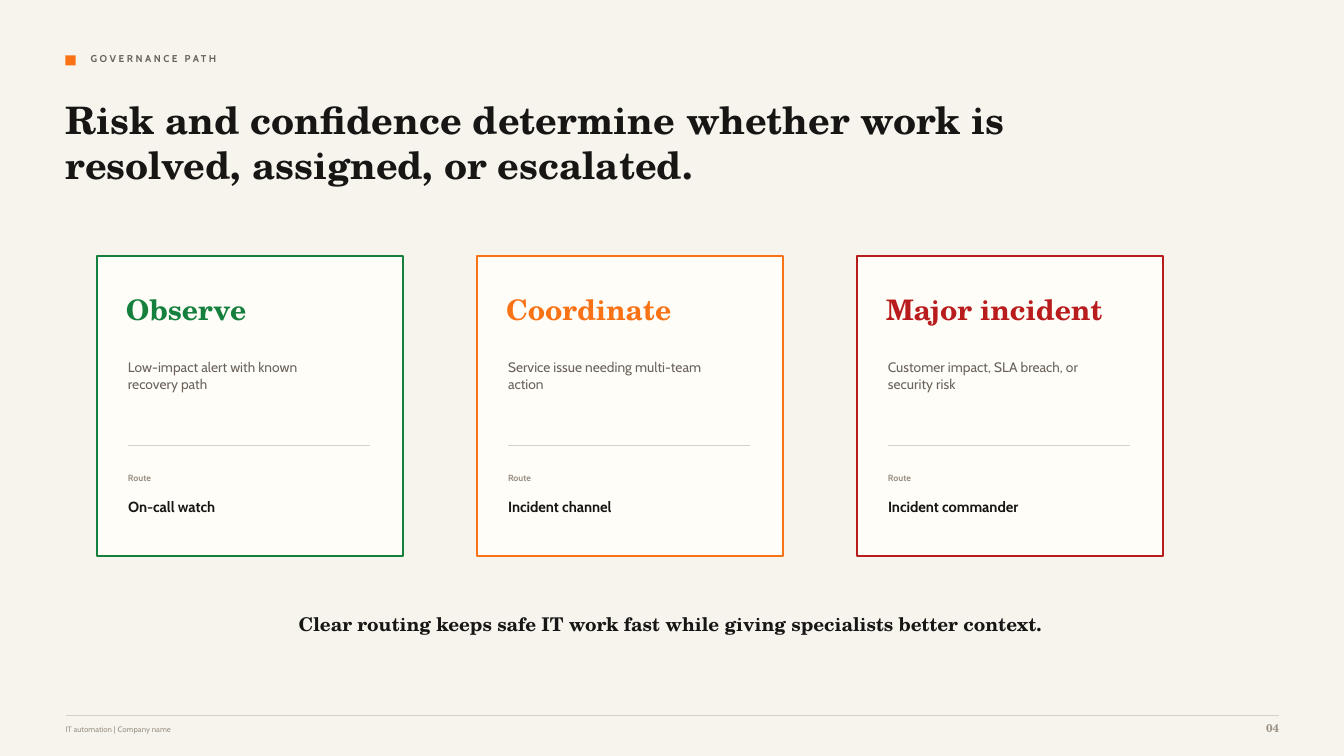
from lxml.etree import SubElement
from pptx import Presentation
from pptx.dml.color import RGBColor
from pptx.enum.shapes import MSO_CONNECTOR, MSO_SHAPE
from pptx.enum.text import MSO_ANCHOR, MSO_AUTO_SIZE, PP_ALIGN
from pptx.oxml.ns import qn
from pptx.util import Emu, Pt

EMU_PER_PX = 9144  # 100 px to the inch

SERIF, SANS = "TeX Gyre Schola", "Cabin"
PAPER, CARD = "F7F4EE", "FFFDF8"
INK, BODY, MUTED, RULE = "171614", "69635A", "9A9184", "D9D0C3"
GREEN, ORANGE, RED = "15803D", "F97316", "B91C1C"


def px(length):
    return Emu(length * EMU_PER_PX)


def colour(value):
    return RGBColor.from_string(value)


class SlideBuilder:
    def __init__(self, page):
        self.page = page

    def background(self, fill):
        self.page.background.fill.solid()
        self.page.background.fill.fore_color.rgb = colour(fill)

    def format_text(self, box, text, size, ink, font=SANS, bold=True,
                    align=PP_ALIGN.LEFT, tracking=0):
        frame = box.text_frame
        frame.text = text
        frame.word_wrap = True
        frame.auto_size = MSO_AUTO_SIZE.NONE
        frame.vertical_anchor = MSO_ANCHOR.TOP
        frame.margin_left = frame.margin_right = 0
        frame.margin_top = frame.margin_bottom = 0
        for para in frame.paragraphs:
            para.alignment = align
            for span in para.runs:
                span.font.name = font
                span.font.size = Pt(size)
                span.font.bold = bold
                span.font.color.rgb = colour(ink)
                if tracking:
                    span.font._element.set("spc", str(tracking))

    def title(self, left, top, width, height, text, size, ink):
        box = self.page.shapes.title
        box.left, box.top = px(left), px(top)
        box.width, box.height = px(width), px(height)
        self.format_text(box, text, size, ink, SERIF)

    def text(self, left, top, width, height, text, size, ink, **style):
        box = self.page.shapes.add_textbox(px(left), px(top), px(width), px(height))
        self.format_text(box, text, size, ink, **style)

    def rect(self, left, top, width, height, fill, line=None):
        shape = self.page.shapes.add_shape(
            MSO_SHAPE.RECTANGLE, px(left), px(top), px(width), px(height))
        shape.shadow.inherit = False
        shape.fill.solid()
        shape.fill.fore_color.rgb = colour(fill)
        if line:
            shape.line.color.rgb = colour(line)
            shape.line.width = Pt(1.5)
        else:
            shape.line.fill.background()

    def rule(self, left, top, width):
        line = self.page.shapes.add_connector(
            MSO_CONNECTOR.STRAIGHT, px(left), px(top), px(left + width), px(top))
        line.line.color.rgb = colour(RULE)
        line.line.width = Pt(0.75)
        SubElement(line._element.spPr, qn("a:effectLst"))

    def card(self, left, accent, heading, description, route):
        inner = left + 31
        self.rect(left, 254, 304, 298, CARD, accent)
        self.text(left + 29, 290, 229, 35, heading, 20.2, accent, font=SERIF)
        self.text(inner, 356, 233, 52, description, 9.8, BODY, bold=False)
        self.rule(inner, 442, 240)
        self.text(inner, 469, 167, 15, "Route", 6.4, MUTED)
        self.text(inner, 494, 229, 23, route, 10.5, INK)


def main():
    deck = Presentation()
    deck.slide_width, deck.slide_height = Emu(12192000), Emu(6858000)
    title_only = deck.slide_layouts[5]
    slide = SlideBuilder(deck.slides.add_slide(title_only))
    slide.background(PAPER)

    # Header
    slide.rect(65, 55, 10, 10, ORANGE)
    slide.text(90, 52, 646, 19, "GOVERNANCE PATH", 7.1, BODY, tracking=180)
    slide.title(65, 96, 938, 102,
                "Risk and confidence determine whether work is resolved, "
                "assigned, or escalated.", 27, INK)

    # Route cards
    cards = [
        (GREEN, "Observe", "Low-impact alert with known\nrecovery path",
         "On-call watch"),
        (ORANGE, "Coordinate", "Service issue needing multi-team\naction",
         "Incident channel"),
        (RED, "Major incident", "Customer impact, SLA breach, or\nsecurity risk",
         "Incident commander"),
    ]
    for index, card in enumerate(cards):
        slide.card(96 + index * 377, *card)

    # Takeaway
    slide.text(196, 608, 938, 29,
               "Clear routing keeps safe IT work fast while giving specialists "
               "better context.", 13.5, INK, font=SERIF, align=PP_ALIGN.CENTER)

    # Footer
    slide.rule(65, 710, 1204)
    slide.text(65, 719, 792, 15, "IT automation | Company name", 5.6, MUTED,
               bold=False)
    slide.text(1219, 715, 50, 19, "04", 8.2, MUTED, font=SERIF,
               align=PP_ALIGN.RIGHT)

    deck.save("out.pptx")


if __name__ == "__main__":
    main()
